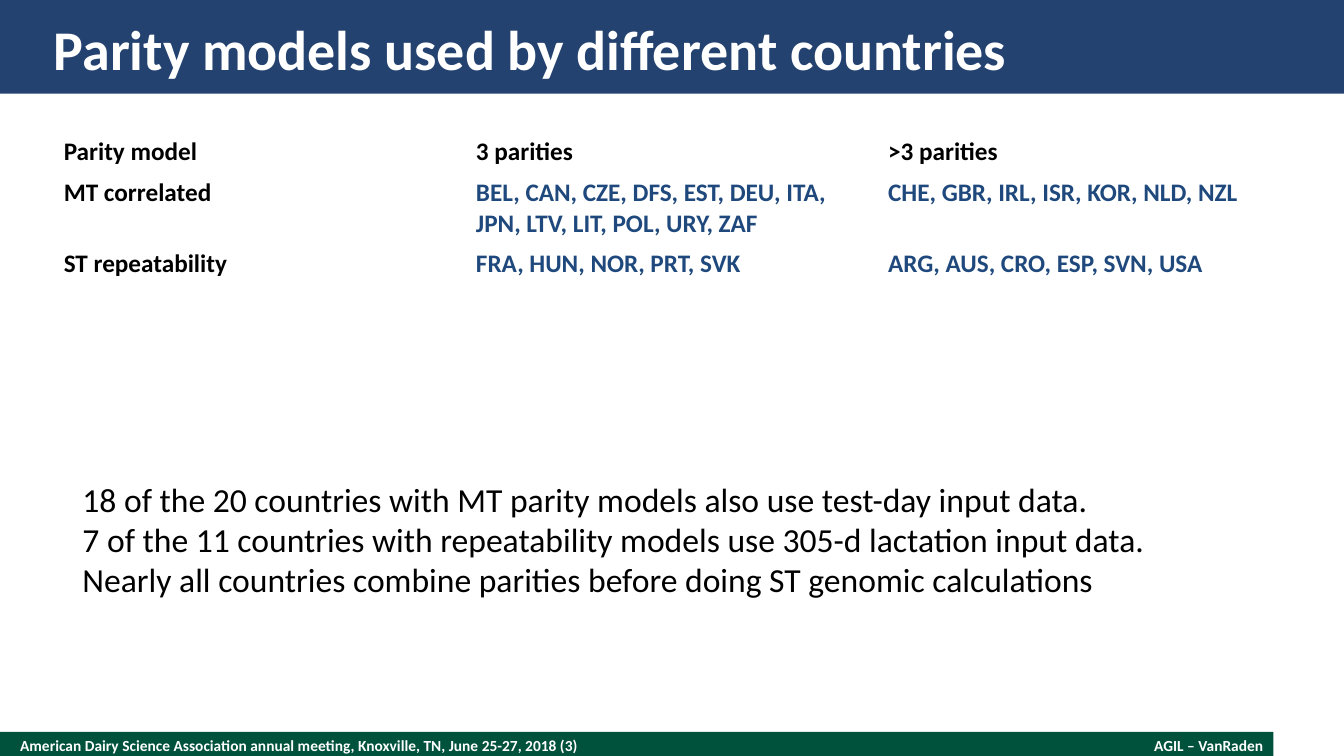
from dataclasses import dataclass

from pptx import Presentation
from pptx.dml.color import RGBColor
from pptx.enum.shapes import MSO_SHAPE
from pptx.enum.text import MSO_ANCHOR, MSO_AUTO_SIZE, PP_ALIGN
from pptx.shapes.autoshape import Shape
from pptx.slide import Slide
from pptx.text.text import TextFrame
from pptx.util import Inches, Pt

SLIDE_WIDTH, SLIDE_HEIGHT = Inches(13.33), Inches(7.5)
FONT = "Calibri"
WHITE, BLACK = "FFFFFF", "000000"
NAVY, GREEN, COUNTRY_BLUE = "244270", "00523C", "1F497D"


@dataclass(frozen=True)
class Area:
    """Left, top, width and height as percentages of the slide."""

    left: float
    top: float
    width: float
    height: float

    def box(self) -> tuple[int, int, int, int]:
        return (
            round(SLIDE_WIDTH * self.left / 100),
            round(SLIDE_HEIGHT * self.top / 100),
            round(SLIDE_WIDTH * self.width / 100),
            round(SLIDE_HEIGHT * self.height / 100),
        )


@dataclass(frozen=True)
class Band:
    area: Area
    color: str


@dataclass(frozen=True)
class FooterText:
    area: Area
    wording: str
    align: PP_ALIGN


@dataclass(frozen=True)
class ParityModel:
    name: str
    three_parities: str
    more_parities: str


TITLE = "Parity models used by different countries"
TITLE_AREA = Area(4, 1.73, 92, 9.33)
TABLE_AREA = Area(4, 17.33, 92, 16.4)
FINDINGS_AREA = Area(5.4, 62.67, 81.25, 17.47)

BANDS = [
    Band(Area(0, 96.8, 94.75, 3.6), GREEN),
    Band(Area(0, 0, 100, 12.4), NAVY),
]
FOOTER = [
    FooterText(
        Area(1.5, 96.8, 65, 3.6),
        "American Dairy Science Association annual meeting, Knoxville, TN, June 25-27, 2018 (3)",
        PP_ALIGN.LEFT,
    ),
    FooterText(Area(72, 97.33, 22, 2.53), "AGIL – VanRaden", PP_ALIGN.RIGHT),
]
MODELS = [
    ParityModel("Parity model", "3 parities", ">3 parities"),
    ParityModel(
        "MT correlated",
        "BEL, CAN, CZE, DFS, EST, DEU, ITA, JPN, LTV, LIT, POL, URY, ZAF",
        "CHE, GBR, IRL, ISR, KOR, NLD, NZL",
    ),
    ParityModel("ST repeatability", "FRA, HUN, NOR, PRT, SVK", "ARG, AUS, CRO, ESP, SVN, USA"),
]
FINDINGS = [
    "18 of the 20 countries with MT parity models also use test-day input data.",
    "7 of the 11 countries with repeatability models use 305-d lactation input data.",
    "Nearly all countries combine parities before doing ST genomic calculations",
]


def rgb(color: str) -> RGBColor:
    return RGBColor.from_string(color)


def write(
    frame: TextFrame,
    wording: str,
    size: float,
    color: str,
    bold: bool = False,
    align: PP_ALIGN = PP_ALIGN.LEFT,
) -> None:
    frame.text = wording
    for paragraph in frame.paragraphs:
        paragraph.alignment = align
        for run in paragraph.runs:
            run.font.name = FONT
            run.font.size = Pt(size)
            run.font.bold = bold
            run.font.color.rgb = rgb(color)


def center_without_margins(frame: TextFrame) -> None:
    frame.margin_left = frame.margin_right = frame.margin_top = frame.margin_bottom = 0
    frame.vertical_anchor = MSO_ANCHOR.MIDDLE
    frame.word_wrap = True


def draw_band(slide: Slide, band: Band) -> None:
    bar = slide.shapes.add_shape(MSO_SHAPE.RECTANGLE, *band.area.box())
    bar.shadow.inherit = False
    bar.fill.solid()
    bar.fill.fore_color.rgb = rgb(band.color)
    bar.line.fill.background()


def draw_footer_text(slide: Slide, footer: FooterText) -> None:
    frame = slide.shapes.add_textbox(*footer.area.box()).text_frame
    center_without_margins(frame)
    write(frame, footer.wording, 11, WHITE, True, footer.align)


def draw_title(heading: Shape) -> None:
    heading.left, heading.top, heading.width, heading.height = TITLE_AREA.box()
    center_without_margins(heading.text_frame)
    heading.text_frame.auto_size = MSO_AUTO_SIZE.NONE
    write(heading.text_frame, TITLE, 40, WHITE, True)
    heading.element.getparent().append(heading.element)


def draw_models(slide: Slide) -> None:
    table = slide.shapes.add_table(len(MODELS), 3, *TABLE_AREA.box()).table
    table.first_row = table.horz_banding = False
    for row, model in enumerate(MODELS):
        for column, entry in enumerate((model.name, model.three_parities, model.more_parities)):
            cell = table.cell(row, column)
            cell.fill.background()
            write(cell.text_frame, entry, 18, COUNTRY_BLUE if row and column else BLACK, True)


def draw_findings(slide: Slide) -> None:
    frame = slide.shapes.add_textbox(*FINDINGS_AREA.box()).text_frame
    frame.word_wrap = False
    frame.auto_size = MSO_AUTO_SIZE.SHAPE_TO_FIT_TEXT
    write(frame, "\n".join(FINDINGS), 24, BLACK)


def main() -> None:
    deck = Presentation()
    deck.slide_width, deck.slide_height = SLIDE_WIDTH, SLIDE_HEIGHT
    slide = deck.slides.add_slide(deck.slide_layouts.get_by_name("Title Only"))
    for band in BANDS:
        draw_band(slide, band)
    for footer in FOOTER:
        draw_footer_text(slide, footer)
    draw_title(slide.shapes.title)
    draw_models(slide)
    draw_findings(slide)
    deck.save("out.pptx")


if __name__ == "__main__":
    main()
